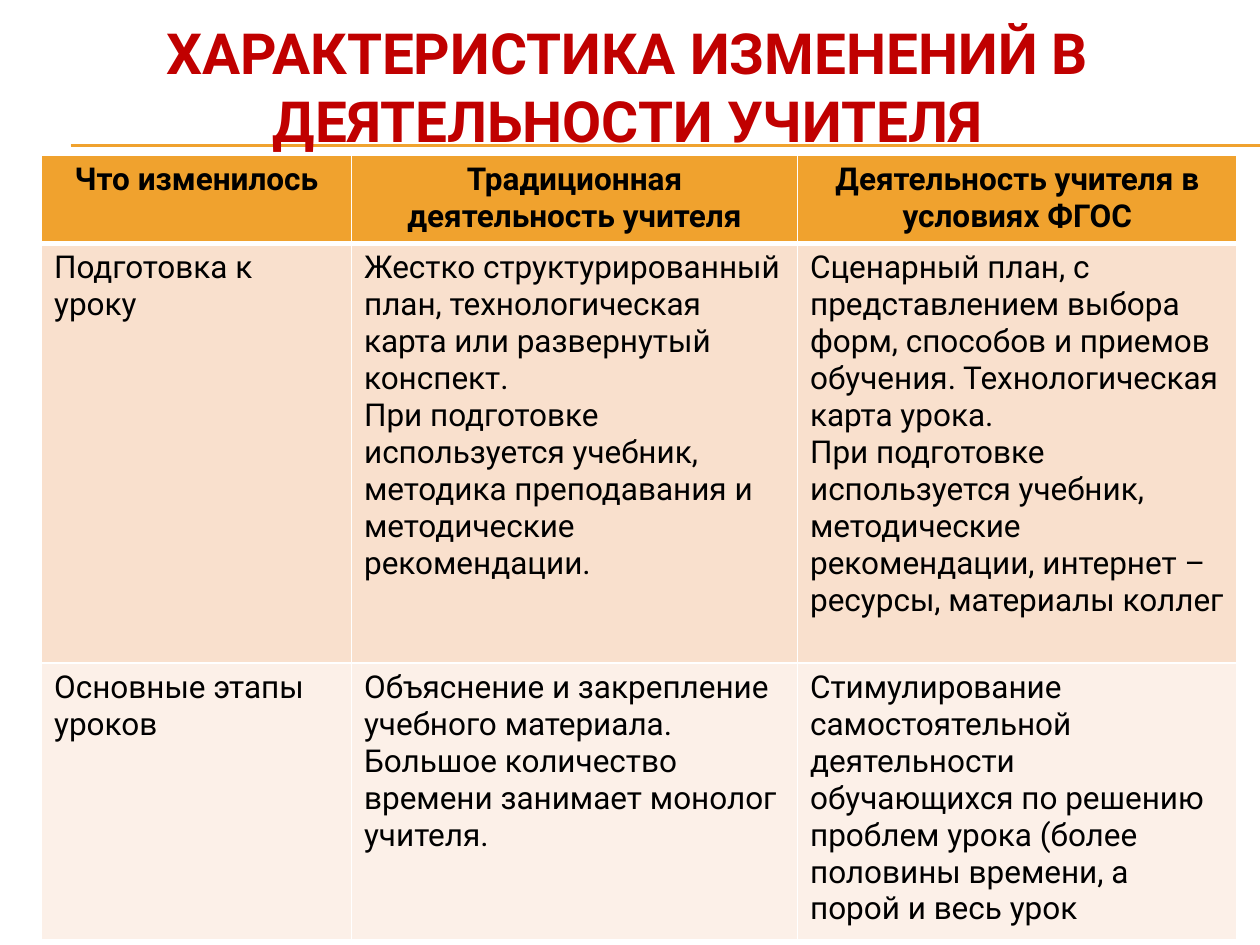
from typing import NamedTuple

from lxml import etree
from pptx import Presentation
from pptx import util as u
from pptx.dml.color import RGBColor
from pptx.enum import text
from pptx.oxml.ns import qn

WIDTH, HEIGHT = 10, 7.5
FONT = "Roboto"
AMBER, RED, BLACK, WHITE = "F0A22E", "C00000", "000000", "FFFFFF"
COLUMNS = (2.46, 3.54, 3.49)
GRID_LEFT, GRID_TOP = 0.33, 1.23


class Band(NamedTuple):
    """One table row: its look and the paragraphs of each cell."""
    height: float
    fill: str
    bold: bool
    align: text.PP_ALIGN
    bottom_border: float
    cells: tuple


BANDS = (
    Band(0.68, AMBER, True, text.PP_ALIGN.CENTER, 3, (
        ("Что изменилось",),
        ("Традиционная деятельность учителя",),
        ("Деятельность учителя в условиях ФГОС",),
    )),
    Band(3.33, "F9E0CD", False, text.PP_ALIGN.LEFT, 1, (
        ("Подготовка к уроку",),
        ("Жестко структурированный план, технологическая карта или "
         "развернутый конспект.",
         "При подготовке используется учебник, методика преподавания и "
         "методические рекомендации."),
        ("Сценарный план, с представлением выбора форм, способов и приемов "
         "обучения. Технологическая карта урока.",
         "При подготовке используется учебник, методические рекомендации, "
         "интернет – ресурсы, материалы коллег"),
    )),
    Band(2.15, "FCF0E8", False, text.PP_ALIGN.LEFT, 1, (
        ("Основные этапы уроков",),
        ("Объяснение и закрепление учебного материала. Большое количество "
         "времени занимает монолог учителя.",),
        ("Стимулирование самостоятельной деятельности обучающихся по решению "
         "проблем урока (более половины времени, а порой и весь урок",),
    )),
)


def color(value: str) -> RGBColor:
    return RGBColor.from_string(value)


def write(frame, paragraphs: tuple, align, size: float, ink: str, bold: bool) -> None:
    """Fill a text frame with equally formatted paragraphs."""
    for index, words in enumerate(paragraphs):
        paragraph = frame.add_paragraph() if index else frame.paragraphs[0]
        paragraph.alignment = align
        run = paragraph.add_run()
        run.text = words
        for name, value in dict(name=FONT, size=u.Pt(size), bold=bold).items():
            setattr(run.font, name, value)
        run.font.color.rgb = color(ink)


def set_borders(cell, widths: dict) -> None:
    """Draw white cell borders; they must precede the fill in the XML."""
    properties = cell._tc.get_or_add_tcPr()
    for position, (side, points) in enumerate(widths.items()):
        border = etree.Element(qn(f"a:{side}"), w=str(u.Pt(points)))
        fill = etree.SubElement(border, qn("a:solidFill"))
        etree.SubElement(fill, qn("a:srgbClr"), val=WHITE)
        properties.insert(position, border)


def draw_rule(slide, y: float) -> None:
    rule = slide.shapes.add_connector(
        1, u.Inches(0.56), u.Inches(y), u.Inches(WIDTH), u.Inches(y))
    rule.line.color.rgb = color(AMBER)
    rule.line.width = u.Pt(0.75)
    etree.SubElement(rule._element.spPr, qn("a:effectLst"))


def draw_title(slide, words: str) -> None:
    box = slide.shapes.add_textbox(*map(u.Inches, (0.12, 0.13, 9.72, 1.1)))
    for name, value in dict(word_wrap=True,
                            vertical_anchor=text.MSO_ANCHOR.MIDDLE).items():
        setattr(box.text_frame, name, value)
    write(box.text_frame, (words,), text.PP_ALIGN.CENTER, 32.4, RED, True)


def draw_comparison(slide, bands: tuple) -> None:
    table = slide.shapes.add_table(
        len(bands), len(COLUMNS), u.Inches(GRID_LEFT), u.Inches(GRID_TOP),
        u.Inches(sum(COLUMNS)), u.Inches(sum(b.height for b in bands))).table
    for column, width in zip(table.columns, COLUMNS):
        column.width = u.Inches(width)
    above = 1
    for row, band in zip(table.rows, bands):
        row.height = u.Inches(band.height)
        for cell, paragraphs in zip(row.cells, band.cells):
            cell.fill.solid()
            cell.fill.fore_color.rgb = color(band.fill)
            set_borders(cell, dict(lnL=1, lnR=1, lnT=above, lnB=band.bottom_border))
            write(cell.text_frame, paragraphs, band.align, 18, BLACK, band.bold)
        above = band.bottom_border


def main() -> None:
    deck = Presentation()
    deck.slide_width, deck.slide_height = u.Inches(WIDTH), u.Inches(HEIGHT)
    slide = deck.slides.add_slide(deck.slide_layouts[6])
    slide.background.fill.solid()
    slide.background.fill.fore_color.rgb = color(WHITE)

    # Double rule behind the heading
    for y in (1.15, 1.16):
        draw_rule(slide, y)
    # Heading and comparison table
    draw_title(slide, "ХАРАКТЕРИСТИКА ИЗМЕНЕНИЙ В ДЕЯТЕЛЬНОСТИ УЧИТЕЛЯ")
    draw_comparison(slide, BANDS)

    deck.save("out.pptx")


if __name__ == "__main__":
    main()
